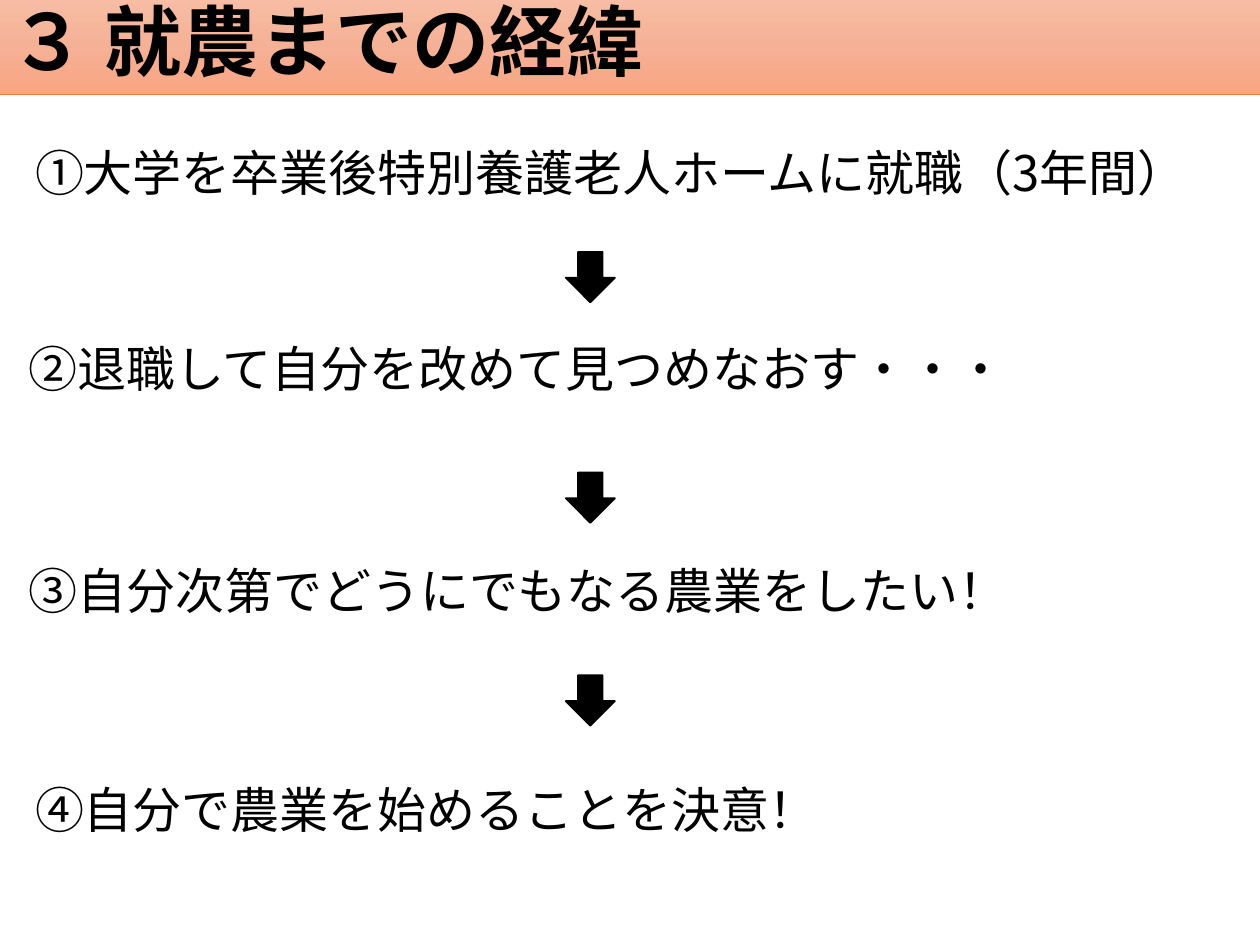
"""Build the slide on the path to starting in farming."""
from copy import deepcopy

from lxml import etree
from pptx import Presentation
from pptx import util as u
from pptx.dml.color import RGBColor
from pptx.enum import shapes, text
from pptx.oxml.ns import qn

FONT = "Noto Sans CJK JP"


def color(value):
    return RGBColor.from_string(value)


def add_text(p, words, size, bold=False):
    r = p.add_run()
    r.text = words
    r.font.size = u.Pt(size)
    r.font.bold = bold
    r.font.name = FONT
    r.font.color.rgb = color("000000")
    ea = etree.Element(qn("a:ea"), typeface=FONT)
    r.font._element.find(qn("a:latin")).addnext(ea)


prs = Presentation()
prs.slide_width = u.Inches(10)
prs.slide_height = u.Inches(7.5)
s = prs.slides.add_slide(prs.slide_layouts[6])

banner = s.shapes.add_shape(
    shapes.MSO_SHAPE.RECTANGLE,
    u.Inches(-0.02), u.Inches(-0.02), u.Inches(10.04), u.Inches(0.77))
banner.shadow.inherit = False
banner.fill.gradient()
banner.fill.gradient_angle = 270
first = banner._element.spPr.find(".//" + qn("a:gs"))
first.addnext(deepcopy(first))
stops = zip(banner.fill.gradient_stops, (0, 0.5, 1), ("F7BDA5", "F5B196", "F8A582"))
for stop, position, shade in stops:
    stop.position = position
    stop.color.rgb = color(shade)
banner.line.color.rgb = color("ED7D31")
banner.line.width = u.Pt(0.5)
tf = banner.text_frame
tf.vertical_anchor = text.MSO_ANCHOR.MIDDLE
p = tf.paragraphs[0]
p.alignment = text.PP_ALIGN.LEFT
p.line_spacing = 0.9
add_text(p, "３ 就農までの経緯", 44, bold=True)

steps = [
    (0.18, 1.08, "①大学を卒業後特別養護老人ホームに就職（3年間）"),
    (0.13, 2.64, "②退職して自分を改めて見つめなおす・・・"),
    (0.13, 4.4, "③自分次第でどうにでもなる農業をしたい！"),
    (0.18, 6.14, "④自分で農業を始めることを決意！"),
]
for left, top, words in steps:
    sp = s.shapes.add_textbox(
        u.Inches(left), u.Inches(top), u.Inches(9.4), u.Inches(0.57))
    tf = sp.text_frame
    tf.word_wrap = True
    tf.auto_size = text.MSO_AUTO_SIZE.SHAPE_TO_FIT_TEXT
    add_text(tf.paragraphs[0], words, 28)

for top in (2, 3.75, 5.36):
    arrow = s.shapes.add_shape(
        shapes.MSO_SHAPE.DOWN_ARROW,
        u.Inches(4.49), u.Inches(top), u.Inches(0.39), u.Inches(0.4))
    arrow.shadow.inherit = False
    arrow.fill.solid()
    arrow.fill.fore_color.rgb = color("000000")
    arrow.line.color.rgb = color("000000")
    arrow.line.width = u.Pt(1)

prs.save("out.pptx")
